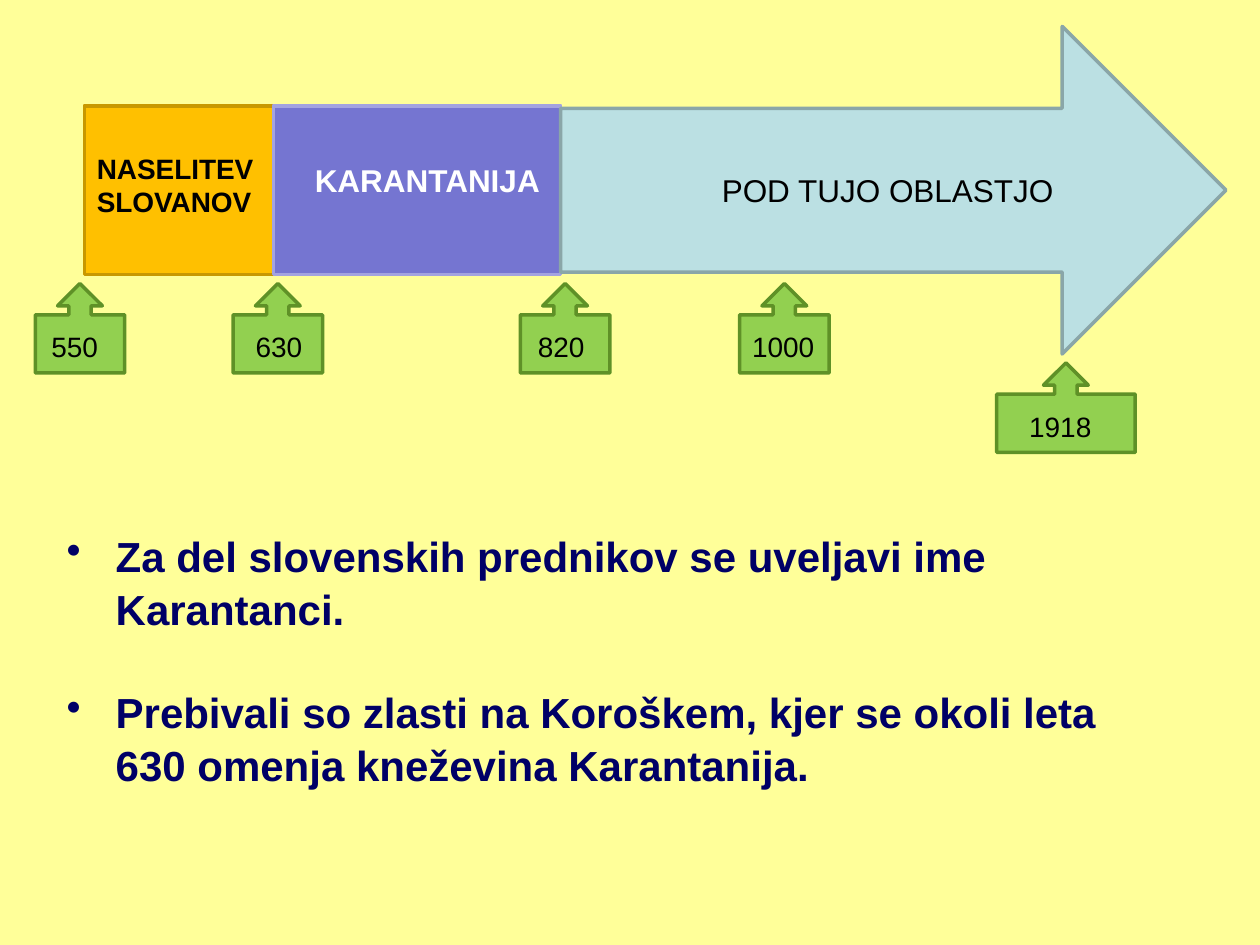
from lxml.etree import SubElement
from pptx import Presentation
from pptx.dml.color import RGBColor
from pptx.enum.shapes import MSO_SHAPE as Shape
from pptx.oxml.ns import qn
from pptx.util import Inches, Pt


def paint(color_format, hex_color):
    color_format.rgb = RGBColor.from_string(hex_color)


def add_text(left, top, width, height, lines, size, color="000000", bold=False):
    """Add a wrapped text box and return its paragraphs."""
    box = slide.shapes.add_textbox(
        Inches(left), Inches(top), Inches(width), Inches(height))
    frame = box.text_frame
    frame.word_wrap = True
    frame.text = "\n".join(lines)
    for para in frame.paragraphs:
        para.font.name = "Arial"
        para.font.size = Pt(size)
        para.font.bold = bold
        paint(para.font.color, color)
    return frame.paragraphs


deck = Presentation()
deck.slide_width, deck.slide_height = Inches(10), Inches(7.5)
slide = deck.slides.add_slide(deck.slide_layouts[6])
background = slide.background.fill
background.solid()
paint(background.fore_color, "FFFF99")

# Periods, then year markers: kind, left, top, width, height, fill, line
outlines = [
    (Shape.RECTANGLE, 0.67, 0.84, 1.5, 1.34, "FFC000", "C89800"),
    (Shape.RECTANGLE, 2.17, 0.84, 2.28, 1.34, "7575D1", "A3A3E0"),
    (Shape.RIGHT_ARROW, 4.45, 0.21, 5.28, 2.6, "BBE0E3", "8AA6A8"),
]
# Year, marker left, marker top, marker width, text left, text width
years = [
    ("550", 0.28, 2.25, 0.71, 0.31, 0.67),
    ("630", 1.85, 2.25, 0.71, 1.93, 0.67),
    ("820", 4.13, 2.25, 0.71, 4.17, 0.67),
    ("1000", 5.87, 2.25, 0.71, 5.87, 0.79),
    ("1918", 7.91, 2.88, 1.1, 8.07, 0.87),
]
for year, left, top, width, text_left, text_width in years:
    outlines.append((Shape.UP_ARROW_CALLOUT, left, top, width, 0.71,
                     "92D050", "5F9127"))

for kind, left, top, width, height, fill, line in outlines:
    shape = slide.shapes.add_shape(
        kind, Inches(left), Inches(top), Inches(width), Inches(height))
    shape.shadow.inherit = False
    shape.fill.solid()
    paint(shape.fill.fore_color, fill)
    paint(shape.line.color, line)
    shape.line.width = Pt(2)

add_text(0.67, 1.15, 1.5, 0.64, ["NASELITEV SLOVANOV"], 16, bold=True)
add_text(2.4, 1.23, 2.13, 0.4, ["KARANTANIJA"], 18, "FFFFFF", bold=True)
add_text(5.63, 1.31, 2.91, 0.4, ["POD TUJO OBLASTJO"], 18)
for year, left, top, width, text_left, text_width in years:
    add_text(text_left, top + 0.32, text_width, 0.37, [year], 16)

facts = add_text(0.43, 4.14, 8.74, 2.12, [
    "Za del slovenskih prednikov se uveljavi ime Karantanci.",
    "Prebivali so zlasti na Koroškem, kjer se okoli leta 630 omenja "
    "kneževina Karantanija.",
], 24, "000066", bold=True)
for para in facts:
    para.line_spacing = 1.05
    properties = para._p.get_or_add_pPr()
    properties.set("marL", str(Inches(0.39)))
    properties.set("indent", str(-Inches(0.39)))
facts[1].space_before = Pt(29)
for para in facts:
    properties = para._p.get_or_add_pPr()
    bullet = SubElement(properties, qn("a:buChar"), char="•")
    properties.find(qn("a:defRPr")).addprevious(bullet)

deck.save("out.pptx")
